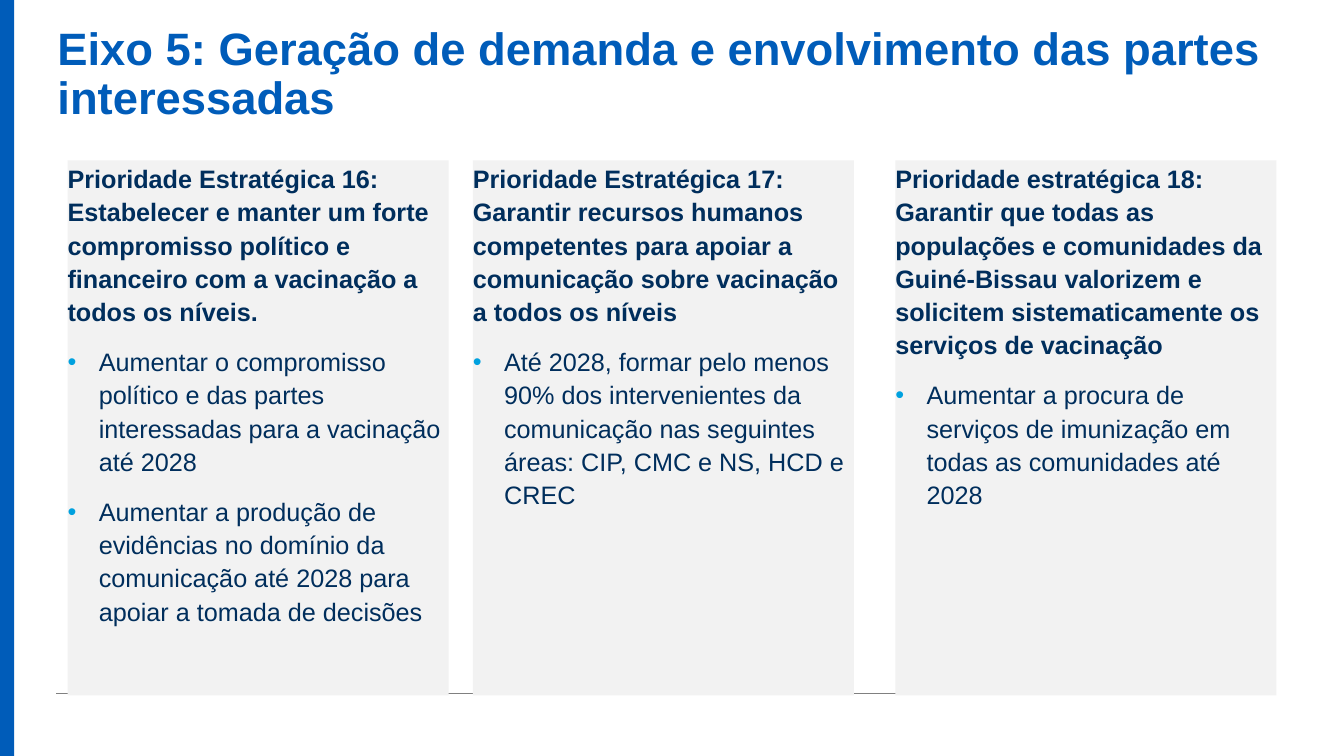
from lxml import etree
from pptx import Presentation
from pptx import util as u
from pptx.dml import color
from pptx.enum import shapes, text
from pptx.oxml import ns

TITLE = "Eixo 5: Geração de demanda e envolvimento das partes interessadas"
CARDS = [
    (0.67, "Prioridade Estratégica 16: Estabelecer e manter um forte compromisso político e financeiro com a vacinação a todos os níveis.",
     ["Aumentar o compromisso político e das partes interessadas para a vacinação até 2028",
      "Aumentar a produção de evidências no domínio da comunicação até 2028 para apoiar a tomada de decisões"]),
    (4.69, "Prioridade Estratégica 17: Garantir recursos humanos competentes para apoiar a comunicação sobre vacinação a todos os níveis",
     ["Até 2028, formar pelo menos 90% dos intervenientes da comunicação nas seguintes áreas: CIP, CMC e NS, HCD e CREC"]),
    (8.88, "Prioridade estratégica 18: Garantir que todas as populações e comunidades da Guiné-Bissau valorizem e solicitem sistematicamente os serviços de vacinação",
     ["Aumentar a procura de serviços de imunização em todas as comunidades até 2028"]),
]
BLUE, NAVY, CYAN, PALE, GREY = "005CB9", "002E5C", "00A1DF", "F2F2F2", "808080"
TOP, WIDE, HIGH = 1.59, 3.78, 5.31
INDENT = u.Inches(0.31)


def rgb(code):
    return color.RGBColor.from_string(code)


def add_rect(slide, left, top, width, height, fill):
    rect = slide.shapes.add_shape(shapes.MSO_SHAPE.RECTANGLE, *map(u.Inches, (left, top, width, height)))
    rect.shadow.inherit = False
    rect.fill.solid()
    rect.fill.fore_color.rgb = rgb(fill)
    rect.line.fill.background()
    return rect


def set_frame(frame):
    frame.word_wrap = True
    frame.vertical_anchor = text.MSO_ANCHOR.TOP
    frame.margin_left = frame.margin_top = frame.margin_right = frame.margin_bottom = 0


def style(par, size, code, bold, space):
    par.alignment = text.PP_ALIGN.LEFT
    par.line_spacing = space
    for run in par.runs:
        run.font.name = "Arial"
        run.font.size = u.Pt(size)
        run.font.bold = bold
        run.font.color.rgb = rgb(code)


def add_bullet(par):
    props = par._p.get_or_add_pPr()
    props.set("marL", str(INDENT))
    props.set("indent", str(-INDENT))
    tint = etree.SubElement(props, ns.qn("a:buClr"))
    etree.SubElement(tint, ns.qn("a:srgbClr"), val=CYAN)
    etree.SubElement(props, ns.qn("a:buFont"), typeface="Arial")
    etree.SubElement(props, ns.qn("a:buChar"), char="•")


def add_card(slide, left, head, goals):
    frame = add_rect(slide, left, TOP, WIDE, HIGH, PALE).text_frame
    set_frame(frame)
    frame.text = "\n".join([head] + goals)
    for i, par in enumerate(frame.paragraphs):
        if i:
            add_bullet(par)
        style(par, 18, NAVY, i == 0, 1.1)
        par.space_after = u.Pt(12)


def main():
    deck = Presentation()
    deck.slide_width, deck.slide_height = u.Inches(13.33), u.Inches(7.5)
    slide = deck.slides.add_slide(deck.slide_layouts[6])
    add_rect(slide, 0, 0, 0.14, 7.5, BLUE)

    rule = slide.shapes.add_connector(shapes.MSO_CONNECTOR.STRAIGHT, *map(u.Inches, (0.56, 6.88, 11.52, 6.88)))
    rule.line.color.rgb = rgb(GREY)
    rule.line.width = u.Pt(0.5)
    etree.SubElement(rule._element.spPr, ns.qn("a:effectLst"))

    title = slide.shapes.add_textbox(*map(u.Inches, (0.57, 0.26, 12.2, 0.65))).text_frame
    set_frame(title)
    title.text = TITLE
    style(title.paragraphs[0], 32.4, BLUE, True, 0.9)

    for card in CARDS:
        add_card(slide, *card)
    deck.save("out.pptx")


if __name__ == "__main__":
    main()
